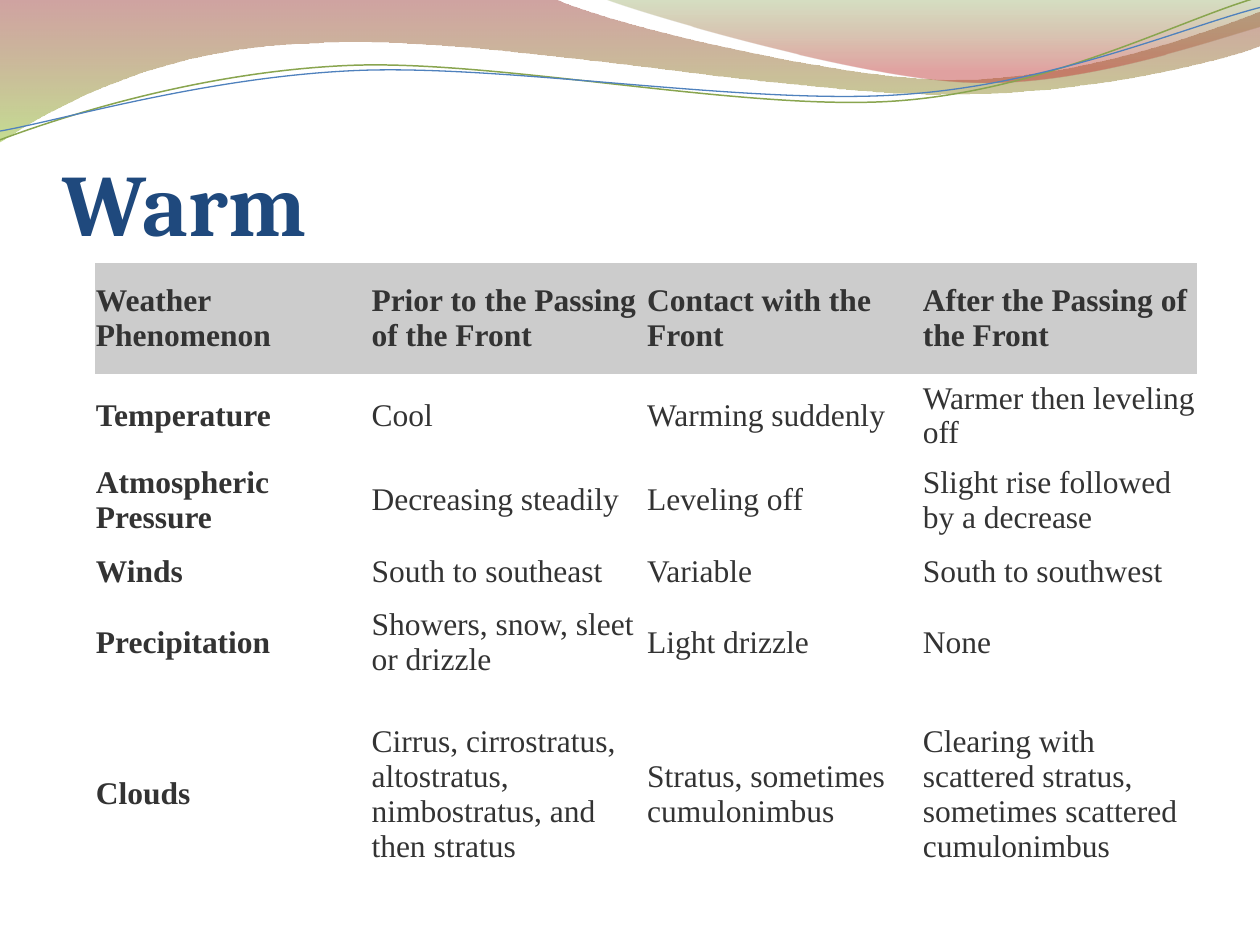
import math
import pptx
import pptx.util
import pptx.dml.color
import pptx.enum.text
import pptx.oxml
import pptx.oxml.ns
import lxml.etree

Pt = pptx.util.Pt
RGB = pptx.dml.color.RGBColor.from_string
Anchor = pptx.enum.text.MSO_ANCHOR
qn = pptx.oxml.ns.qn

theme = {
    "title": {"size": 50, "font": "Cambria", "color": "1F497D"},
    "cell": {"size": 18, "font": "Times New Roman", "color": "333333"},
    "head": "CCCCCC",
    "body": "FFFFFF",
    "wave": [(0, "973330", 45), (1, "95C238", 55)],
    "crest": [(0, "769537", 30), (0.8, "BE3330", 45)],
    "green": "89A54F",
    "blue": "4F81BD",
}


def write(frame, text, size, font, color, bold=False):
    frame.word_wrap = True
    run = frame.paragraphs[0].add_run()
    run.text = text
    run.font.size = Pt(size)
    run.font.name = font
    run.font.bold = bold
    run.font.color.rgb = RGB(color)


def trace(start, steps, close=False, turn=0, mid=(0, 0)):
    cos, sin = math.cos(math.radians(turn)), math.sin(math.radians(turn))
    flat = list(start) + [v for step in steps for v in step]
    dots = []
    for x, y in zip(flat[::2], flat[1::2]):
        x, y = x - mid[0], y - mid[1]
        dots.append((Pt(mid[0] + x * cos - y * sin), Pt(mid[1] + x * sin + y * cos)))
    pen = slide.shapes.build_freeform(*dots[0])
    pen.add_line_segments(dots[1:], close=close)
    shape = pen.convert_to_shape()
    shape.shadow.inherit = False
    shape.rotation = -turn % 360
    lines = iter(list(shape._element.iter(qn("a:lnTo"))))
    for step in steps:
        first = next(lines)
        if len(step) == 6:
            first.tag = qn("a:cubicBezTo")
            for _ in range(2):
                more = next(lines)
                first.append(more[0])
                more.getparent().remove(more)
    return shape


deck = pptx.Presentation()
deck.slide_width, deck.slide_height = Pt(720), Pt(540)
slide = deck.slides.add_slide(deck.slide_layouts[6])

bands = [
    ("wave", (0, 0), [
        (316.8, -0.7),
        (342.7, 12.2, 478.1, 45.4, 545.8, 45.4),
        (614.2, 45.4, 689.8, 18.7, 720, 6.5),
        (720.7, 25.9),
        (707.8, 31.7, 626.4, 54.7, 537.1, 54),
        (447.8, 54, 275, 20.2, 185, 24.5),
        (92.9, 25.9, 33.1, 59.8, -0.7, 81.4),
        (0, 0)]),
    ("crest", (344.9, -0.7), [
        (366.5, 7.9, 491, 44.6, 553.7, 46.8),
        (616.3, 49.7, 691.9, 23, 720, 15.1),
        (720, 0),
        (344.9, -0.7)]),
]
for name, start, steps in bands:
    band = trace(start, steps, close=True)
    band.line.fill.background()
    band.fill.gradient()
    band.fill.gradient_angle = 270
    for stop, (place, color, alpha) in zip(band.fill.gradient_stops, theme[name]):
        stop.position = place
        stop.color.rgb = RGB(color)
    tints = list(band._element.spPr.iter(qn("a:srgbClr")))
    for tint, (place, color, alpha) in zip(tints, theme[name]):
        lxml.etree.SubElement(tint, qn("a:alpha"), val=str(alpha * 1000))

curves = [
    ("green", 0.85, (359.3, 41.4), (0, 79.9), [
        (34.6, 67, 113.8, 41, 199.4, 37.4),
        (284.4, 33.8, 427, 64.1, 513.4, 57.6),
        (599.8, 51.1, 675.4, 10.8, 718.6, -1.4)]),
    ("blue", 0.75, (359.6, 42.5), (0, 74.9), [
        (33.8, 69.1, 118.1, 43.9, 203.8, 40.3),
        (290.2, 36.7, 429.8, 60.5, 516.2, 54),
        (601.9, 48.2, 677.5, 15.1, 720, 4.3)]),
]
for name, width, mid, start, steps in curves:
    curve = trace(start, steps, turn=2.7, mid=mid)
    curve.fill.background()
    curve.line.color.rgb = RGB(theme[name])
    curve.line.width = Pt(width)

title = slide.shapes.add_textbox(Pt(36), Pt(55), Pt(648), Pt(90)).text_frame
title.margin_left = title.margin_right = title.margin_bottom = 0
title.margin_top = Pt(3.6)
title.vertical_anchor = Anchor.BOTTOM
write(title, "Warm", bold=True, **theme["title"])

rows = [
    ("Weather Phenomenon", "Prior to the Passing of the Front",
     "Contact with the Front", "After the Passing of the Front"),
    ("Temperature", "Cool", "Warming suddenly", "Warmer then leveling off"),
    ("Atmospheric Pressure", "Decreasing steadily", "Leveling off",
     "Slight rise followed by a decrease"),
    ("Winds", "South to southeast", "Variable", "South to southwest"),
    ("Precipitation", "Showers, snow, sleet or drizzle", "Light drizzle", "None"),
    ("Clouds", "Cirrus, cirrostratus, altostratus, nimbostratus, and then stratus",
     "Stratus, sometimes cumulonimbus",
     "Clearing with scattered stratus, sometimes scattered cumulonimbus"),
]
highs = [63.5, 48.25, 48.25, 33, 48.25, 125.25]
table = slide.shapes.add_table(
    len(rows), 4, Pt(54.1), Pt(150), Pt(630), Pt(sum(highs))).table
table.horz_banding = False
table._tbl.tblPr.find(qn("a:tableStyleId")).text = "{2D5ABB26-0587-4C30-8999-92F81FD0307C}"
for r, (texts, high) in enumerate(zip(rows, highs)):
    table.rows[r].height = Pt(high)
    for c, text in enumerate(texts):
        cell = table.cell(r, c)
        cell.fill.solid()
        cell.fill.fore_color.rgb = RGB(theme["body" if r else "head"])
        cell.margin_left = cell.margin_right = Pt(0.75)
        cell.margin_top = cell.margin_bottom = Pt(0.75)
        cell.vertical_anchor = Anchor.MIDDLE
        write(cell.text_frame, text, bold=r == 0 or c == 0, **theme["cell"])

deck.save("out.pptx")
